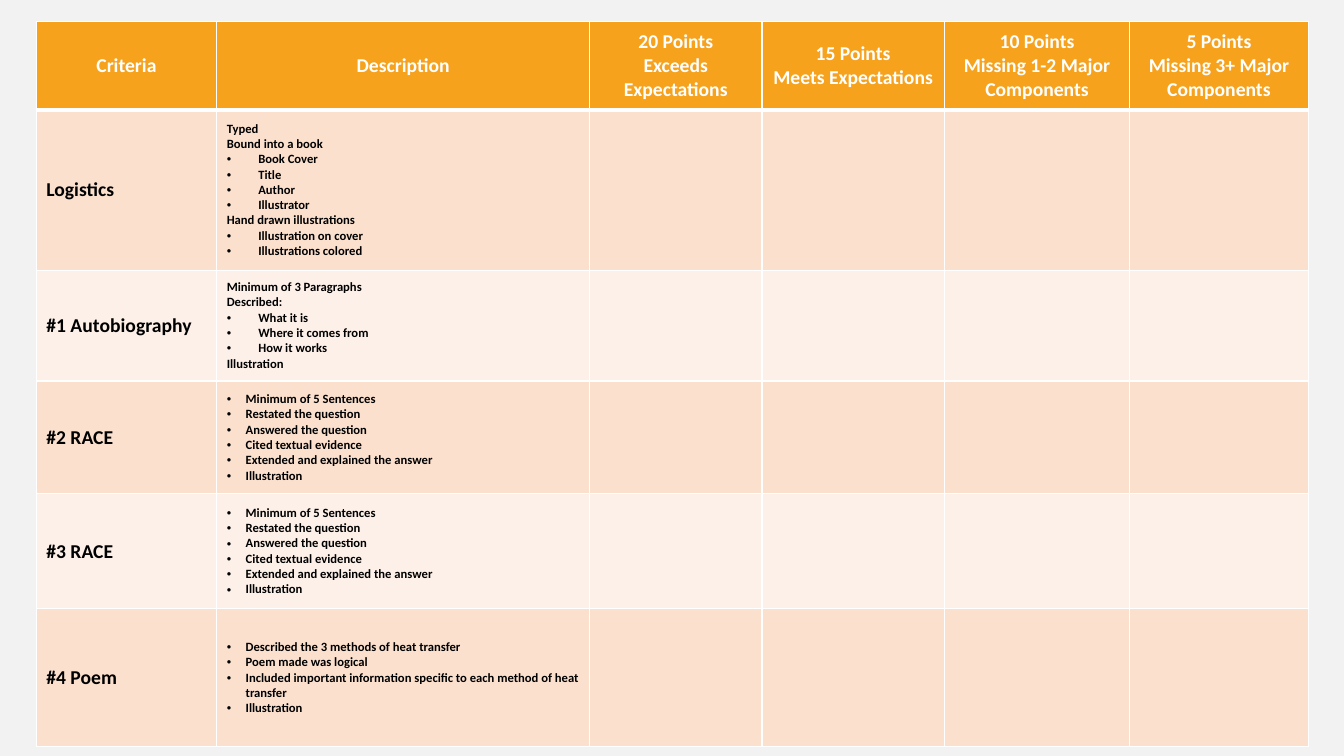
from dataclasses import dataclass

from lxml import etree
from pptx import Presentation
from pptx.dml.color import RGBColor
from pptx.enum.text import MSO_ANCHOR, PP_ALIGN
from pptx.oxml.ns import qn
from pptx.table import _Cell
from pptx.text.text import _Paragraph
from pptx.util import Pt

MIDDLE = MSO_ANCHOR.MIDDLE
LEFT, CENTER = PP_ALIGN.LEFT, PP_ALIGN.CENTER

COLORS = {
    "background": "F2F2F2",
    "header": "F6A21D",
    "dark_band": "FBE0CD",
    "light_band": "FDF0E8",
    "white": "FFFFFF",
    "black": "000000",
}
FONT = "Calibri"
TABLE_LEFT, TABLE_TOP = 25.9, 15.1
COLUMN_WIDTHS = [128.9, 266.4, 123.1, 130.3, 132.5, 127.4]
HEADER_HEIGHT = 63.4
HEADERS = [
    "Criteria",
    "Description",
    "20 Points\nExceeds Expectations",
    "15 Points\nMeets Expectations",
    "10 Points\nMissing 1-2 Major Components",
    "5 Points\nMissing 3+ Major Components",
]


@dataclass
class Criterion:
    name: str
    height: float
    indent: float
    lines: list[str]  # a leading "•" marks a bulleted line


RACE_LINES = [
    "•Minimum of 5 Sentences",
    "•Restated the question",
    "•Answered the question",
    "•Cited textual evidence",
    "•Extended and explained the answer",
    "•Illustration",
]
CRITERIA = [
    Criterion("Logistics", 114.5, 22.5, [
        "Typed", "Bound into a book",
        "•Book Cover", "•Title", "•Author", "•Illustrator",
        "Hand drawn illustrations",
        "•Illustration on cover", "•Illustrations colored",
    ]),
    Criterion("#1 Autobiography", 79.2, 22.5, [
        "Minimum of 3 Paragraphs", "Described:",
        "•What it is", "•Where it comes from", "•How it works",
        "Illustration",
    ]),
    Criterion("#2 RACE", 80.6, 13.5, RACE_LINES),
    Criterion("#3 RACE", 82.1, 13.5, RACE_LINES),
    Criterion("#4 Poem", 98.6, 13.5, [
        "•Described the 3 methods of heat transfer",
        "•Poem made was logical",
        "•Included important information specific to each method of heat transfer",
        "•Illustration",
    ]),
]


def color(name: str) -> RGBColor:
    return RGBColor.from_string(COLORS[name])


def set_borders(cell: _Cell, top: float, bottom: float) -> None:
    properties = cell._tc.get_or_add_tcPr()
    widths = {"a:lnL": 1, "a:lnR": 1, "a:lnT": top, "a:lnB": bottom}
    for position, (tag, width) in enumerate(widths.items()):
        line = etree.Element(qn(tag), w=str(Pt(width)))
        fill = etree.SubElement(line, qn("a:solidFill"))
        etree.SubElement(fill, qn("a:srgbClr"), val=COLORS["white"])
        properties.insert(position, line)


def add_bullet(paragraph: _Paragraph, indent: float) -> None:
    properties = paragraph._p.get_or_add_pPr()
    properties.set("marL", str(Pt(indent)))
    properties.set("indent", str(-Pt(indent)))
    etree.SubElement(properties, qn("a:buFont"), typeface="Arial")
    etree.SubElement(properties, qn("a:buChar"), char="•")


def write_cell(cell: _Cell, text: str, size: float, text_color: str,
               alignment: PP_ALIGN = LEFT, indent: float = 0) -> None:
    cell.vertical_anchor = MIDDLE
    cell.text_frame.text = text.replace("•", "")
    for line, paragraph in zip(text.split("\n"), cell.text_frame.paragraphs):
        paragraph.alignment = alignment
        if line.startswith("•"):
            add_bullet(paragraph, indent)
        for run in paragraph.runs:
            run.font.name = FONT
            run.font.size = Pt(size)
            run.font.bold = True
            run.font.color.rgb = color(text_color)


def build_slide(presentation: Presentation) -> None:
    slide = presentation.slides.add_slide(presentation.slide_layouts[6])
    slide.background.fill.solid()
    slide.background.fill.fore_color.rgb = color("background")

    # Grid
    heights = [HEADER_HEIGHT] + [criterion.height for criterion in CRITERIA]
    table = slide.shapes.add_table(
        len(heights), len(COLUMN_WIDTHS), Pt(TABLE_LEFT), Pt(TABLE_TOP),
        Pt(sum(COLUMN_WIDTHS)), Pt(sum(heights))).table
    for column, width in zip(table.columns, COLUMN_WIDTHS):
        column.width = Pt(width)

    # Fills and borders
    for index, (row, height) in enumerate(zip(table.rows, heights)):
        row.height = Pt(height)
        band = "dark_band" if index % 2 else "light_band"
        for cell in row.cells:
            cell.fill.solid()
            cell.fill.fore_color.rgb = color(band if index else "header")
            set_borders(cell, top=3 if index == 1 else 1,
                        bottom=1 if index else 3)

    # Header row
    for column_index, header in enumerate(HEADERS):
        write_cell(table.cell(0, column_index), header, 14, "white", CENTER)

    # Criteria rows
    for row_index, criterion in enumerate(CRITERIA, start=1):
        write_cell(table.cell(row_index, 0), criterion.name, 14, "black")
        write_cell(table.cell(row_index, 1), "\n".join(criterion.lines), 9,
                   "black", indent=criterion.indent)


def main() -> None:
    presentation = Presentation()
    presentation.slide_width, presentation.slide_height = Pt(960), Pt(540)
    build_slide(presentation)
    presentation.save("out.pptx")


if __name__ == "__main__":
    main()
